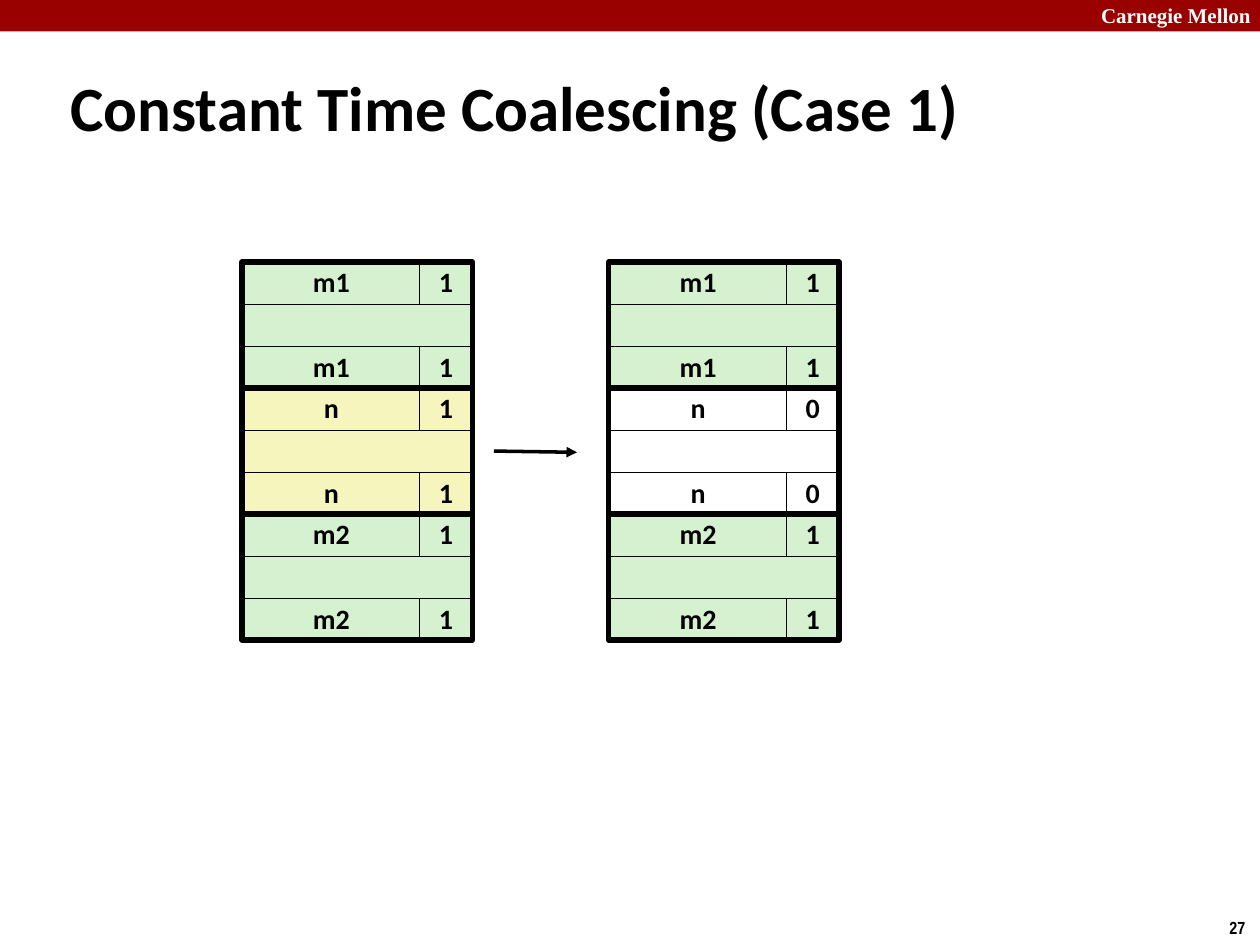
import pptx
import pptx.util
import pptx.dml.color
import pptx.enum.shapes
import pptx.enum.text
from lxml import etree
from pptx.oxml.ns import qn
from pptx.util import Inches

TITLE = "Constant Time Coalescing (Case 1)"
GREEN, YELLOW, WHITE, BLACK, RED = "D5F1CF", "F6F5BD", "FFFFFF", "000000", "990000"

# Each heap: left edge, then its blocks as (size label, allocated flag, fill)
HEAPS = [
    (1.92, [("m1", "1", GREEN), ("n", "1", YELLOW), ("m2", "1", GREEN)]),
    (4.83, [("m1", "1", GREEN), ("n", "0", WHITE), ("m2", "1", GREEN)]),
]
# Text, left, top, width, height, font, size, colour, wrap
PAGE_LABELS = [
    ("Carnegie Mellon", 8.64, -0.03, 1.43, 0.3, "Times New Roman", 12, WHITE, True),
    ("27", 9.66, 7.23, 0.34, 0.27, "Arial Narrow", 10, BLACK, False),
]
HEAP_TOP = 2.08
BLOCK_HEIGHT = 1
ROW_HEIGHT = BLOCK_HEIGHT / 3
SIZE_WIDTH, FLAG_WIDTH = 1.42, 0.42
BLOCK_WIDTH = 1.83
ARROW = (3.92, 3.58, 4.58, 3.59)


def colour(hex_text):
    return pptx.dml.color.RGBColor.from_string(hex_text)


def write(shape, text, font, size, hex_text):
    shape.text_frame.text = text
    style = shape.text_frame.paragraphs[0].runs[0].font
    style.name, style.size, style.bold = font, pptx.util.Pt(size), True
    style.color.rgb = colour(hex_text)


def add_box(page, left, top, width, height, fill=None, line_width=None):
    """Add a rectangle; without a fill or a line width that part is left out."""
    box = page.shapes.add_shape(
        pptx.enum.shapes.MSO_SHAPE.RECTANGLE,
        Inches(left), Inches(top), Inches(width), Inches(height))
    box.shadow.inherit = False
    if fill:
        box.fill.solid()
        box.fill.fore_color.rgb = colour(fill)
    else:
        box.fill.background()
    if line_width:
        box.line.color.rgb = colour(BLACK)
        box.line.width = pptx.util.Pt(line_width)
    else:
        box.line.fill.background()
    return box


def add_cell(page, left, top, width, fill, text=None):
    cell = add_box(page, left, top, width, ROW_HEIGHT, fill, 0.25)
    if text:
        write(cell, text, "Calibri", 16, BLACK)
        cell.text_frame.word_wrap = False
        cell.text_frame.vertical_anchor = pptx.enum.text.MSO_ANCHOR.MIDDLE
        para = cell.text_frame.paragraphs[0]
        para.alignment = pptx.enum.text.PP_ALIGN.CENTER
        para.line_spacing = 0.98


def add_block(page, left, top, label, flag, fill):
    """Draw header, payload and footer rows inside one thick frame."""
    flag_left = left + BLOCK_WIDTH - FLAG_WIDTH
    for row in range(3):
        row_top = top + row * ROW_HEIGHT
        if row == 1:
            add_cell(page, left, row_top, BLOCK_WIDTH, fill)
        else:
            add_cell(page, left, row_top, SIZE_WIDTH, fill, label)
            add_cell(page, flag_left, row_top, FLAG_WIDTH, fill, flag)
    add_box(page, left, top, BLOCK_WIDTH, BLOCK_HEIGHT, line_width=3)


def add_arrow(page, *ends):
    arrow = page.shapes.add_connector(
        pptx.enum.shapes.MSO_CONNECTOR.STRAIGHT, *[Inches(end) for end in ends])
    arrow.line.color.rgb = colour(BLACK)
    arrow.line.width = pptx.util.Pt(2)
    properties = arrow.line._get_or_add_ln()
    etree.SubElement(properties, qn("a:tailEnd"), type="triangle")
    etree.SubElement(arrow._element.spPr, qn("a:effectLst"))


def add_title(page):
    title = page.shapes.title
    title.left, title.top = Inches(0.46), Inches(0.53)
    title.width, title.height = Inches(9.08), Inches(0.63)
    write(title, TITLE, "Calibri", 36, BLACK)
    title.text_frame.auto_size = pptx.enum.text.MSO_AUTO_SIZE.NONE
    title.text_frame.vertical_anchor = pptx.enum.text.MSO_ANCHOR.MIDDLE
    para = title.text_frame.paragraphs[0]
    para.alignment = pptx.enum.text.PP_ALIGN.LEFT
    indent = Inches(0.13)
    para._p.get_or_add_pPr().set("marL", str(indent))
    para._p.get_or_add_pPr().set("indent", str(-indent))


def main():
    deck = pptx.Presentation()
    deck.slide_width, deck.slide_height = Inches(10), Inches(7.5)
    page = deck.slides.add_slide(deck.slide_layouts.get_by_name("Title Only"))

    add_box(page, 0, 0, 10, 0.25, RED)
    for text, left, top, width, height, font, size, hex_text, wrap in PAGE_LABELS:
        label = page.shapes.add_textbox(
            Inches(left), Inches(top), Inches(width), Inches(height))
        write(label, text, font, size, hex_text)
        label.text_frame.word_wrap = wrap
    add_title(page)

    for left, blocks in HEAPS:
        for index, block in enumerate(blocks):
            add_block(page, left, HEAP_TOP + index * BLOCK_HEIGHT, *block)
    add_arrow(page, *ARROW)
    deck.save("out.pptx")


if __name__ == "__main__":
    main()
